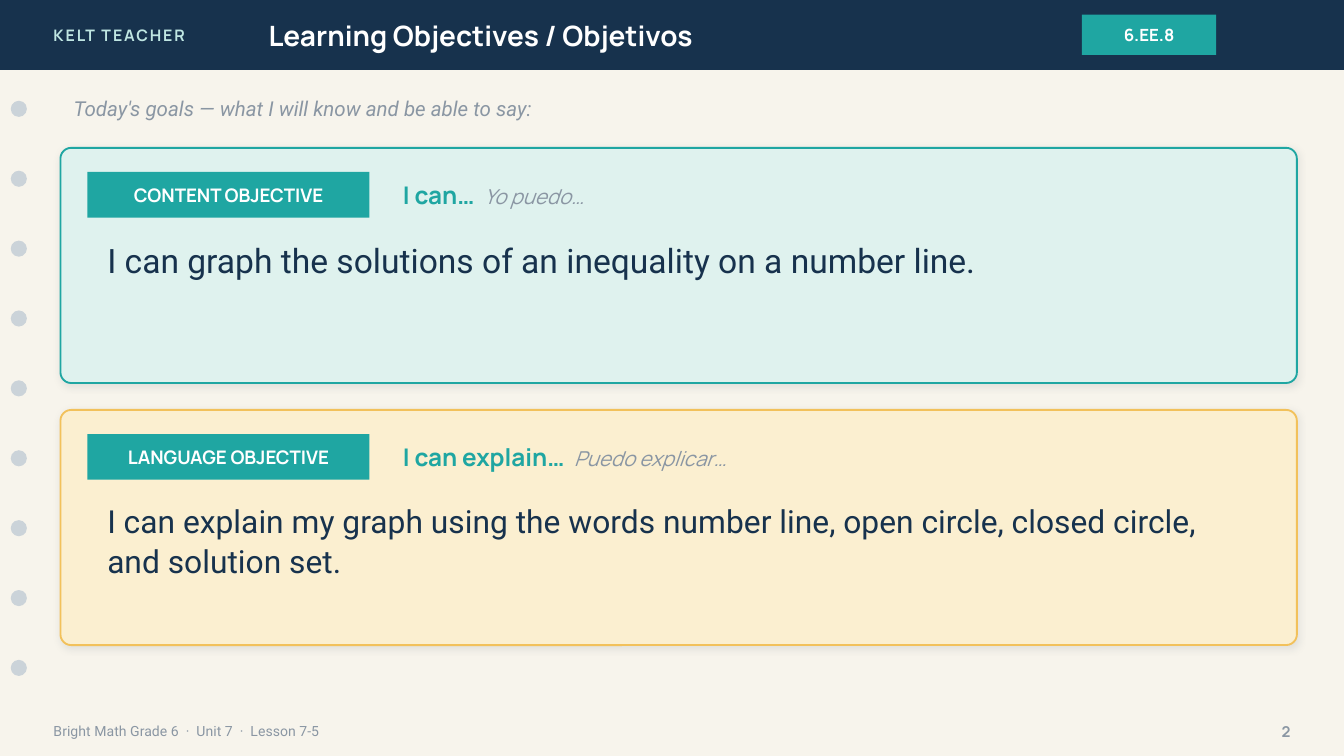
from dataclasses import dataclass

import pptx
import pptx.dml.color
import pptx.enum.shapes
import pptx.enum.text
import pptx.oxml
import pptx.oxml.ns
import pptx.util
from pptx.dml.color import RGBColor
from pptx.util import Inches

NAVY = RGBColor(0x17, 0x32, 0x4D)
TEAL = RGBColor(0x1F, 0xA6, 0xA2)
MINT = RGBColor(0xDF, 0xF2, 0xEE)
PALE_TEAL = RGBColor(0xBF, 0xE6, 0xE2)
GOLD = RGBColor(0xF2, 0xC1, 0x5B)
CREAM = RGBColor(0xFB, 0xEF, 0xD0)
PAPER = RGBColor(0xF7, 0xF4, 0xEC)
GREY = RGBColor(0x8A, 0x96, 0xA3)
DOT_GREY = RGBColor(0xCB, 0xD3, 0xD9)
WHITE = RGBColor(0xFF, 0xFF, 0xFF)

HEADING, BODY = "Manrope", "Roboto"
SHAPE = pptx.enum.shapes.MSO_SHAPE
ALIGN = pptx.enum.text.PP_ALIGN
ANCHOR = pptx.enum.text.MSO_ANCHOR

SLIDE_W = 10
SLIDE_H = SLIDE_W * 9 / 16
HEADER_H = 0.52
DOT_COUNT, DOT_TOP, DOT_STEP = 9, 0.75, 0.52
CARD_TOP, CARD_STEP = 1.1, 1.95

SHADOW_XML = (
    f'<a:effectLst {pptx.oxml.ns.nsdecls("a")}>'
    '<a:outerShdw blurRad="50800" dist="12700" dir="5400000" algn="bl" rotWithShape="0">'
    '<a:srgbClr val="1C2E42"><a:alpha val="10000"/></a:srgbClr>'
    '</a:outerShdw></a:effectLst>'
)


@dataclass
class Box:
    left: float
    top: float
    width: float
    height: float

    def lengths(self) -> list:
        return [Inches(v) for v in (self.left, self.top, self.width, self.height)]


@dataclass
class Objective:
    label: str
    starter: str
    translation: str
    statement: str
    size: float
    fill: RGBColor
    border: RGBColor


OBJECTIVES = [
    Objective("CONTENT OBJECTIVE", "I can…", "Yo puedo…",
              "I can graph the solutions of an inequality on a number line.",
              18, MINT, TEAL),
    Objective("LANGUAGE OBJECTIVE", "I can explain…", "Puedo explicar…",
              "I can explain my graph using the words number line, open circle, "
              "closed circle, and solution set.",
              17, CREAM, GOLD),
]


def add_run(p, text: str, *, size: float, color: RGBColor, font: str = HEADING,
            bold: bool = False, italic: bool = False, spacing: float = 0) -> None:
    r = p.add_run()
    r.text = text
    r.font.name = font
    r.font.size = pptx.util.Pt(size)
    r.font.color.rgb = color
    r.font.bold = bold
    r.font.italic = italic
    if spacing:
        r.font._element.set("spc", str(round(spacing * 100)))


def add_text(s, box: Box, text: str, *, align=ALIGN.LEFT, anchor=ANCHOR.MIDDLE,
             line_spacing: float | None = None, **run_format):
    """Add a wrapping text box and return its paragraph, for further runs."""
    tf = s.shapes.add_textbox(*box.lengths()).text_frame
    tf.word_wrap = True
    tf.vertical_anchor = anchor
    p = tf.paragraphs[0]
    p.alignment = align
    if line_spacing:
        p.line_spacing = line_spacing
    add_run(p, text, **run_format)
    return p


def add_shape(s, kind, box: Box, fill: RGBColor, border: RGBColor | None = None):
    sp = s.shapes.add_shape(kind, *box.lengths())
    sp.shadow.inherit = False
    sp.fill.solid()
    sp.fill.fore_color.rgb = fill
    if border is None:
        sp.line.fill.background()
    else:
        sp.line.color.rgb = border
        sp.line.width = pptx.util.Pt(1)
    return sp


def add_tag(s, box: Box, text: str, size: float) -> None:
    sp = add_shape(s, SHAPE.RECTANGLE, box, TEAL)
    tf = sp.text_frame
    tf.vertical_anchor = ANCHOR.MIDDLE
    p = tf.paragraphs[0]
    p.alignment = ALIGN.CENTER
    add_run(p, text, size=size, color=WHITE, bold=True)


def add_card(s, objective: Objective, top: float) -> None:
    card = add_shape(s, SHAPE.ROUNDED_RECTANGLE, Box(0.45, top, 9.2, 1.75),
                     objective.fill, objective.border)
    card.adjustments[0] = 0.08 / 1.75
    sp_pr = card._element.spPr
    sp_pr.replace(sp_pr.find(pptx.oxml.ns.qn("a:effectLst")),
                  pptx.oxml.parse_xml(SHADOW_XML))

    add_tag(s, Box(0.65, top + 0.18, 2.1, 0.34), objective.label, 10)
    p = add_text(s, Box(2.9, top + 0.18, 6.6, 0.34), objective.starter + "  ",
                 size=13, color=TEAL, bold=True)
    add_run(p, objective.translation, size=11, color=GREY, italic=True)
    add_text(s, Box(0.7, top + 0.62, 8.7, 1), objective.statement, anchor=ANCHOR.TOP,
             line_spacing=1.05, size=objective.size, color=NAVY, font=BODY)


def add_header(s) -> None:
    add_shape(s, SHAPE.RECTANGLE, Box(0, 0, SLIDE_W, HEADER_H), NAVY)
    add_text(s, Box(0.3, 0, 2.4, HEADER_H), "KELT TEACHER",
             size=8.5, color=PALE_TEAL, bold=True, spacing=1)
    add_text(s, Box(1.9, 0, 5.6, HEADER_H), "Learning Objectives / Objetivos",
             size=15, color=WHITE, bold=True)
    add_tag(s, Box(8.05, 0.11, 1, 0.3), "6.EE.8", 9)


def add_footer(s) -> None:
    add_text(s, Box(0.3, 5.3, 7, 0.28), "Bright Math Grade 6  ·  Unit 7  ·  Lesson 7-5",
             size=7.5, color=GREY, font=BODY)
    add_text(s, Box(9.2, 5.3, 0.5, 0.28), "2", align=ALIGN.RIGHT,
             size=8, color=GREY, bold=True)


def main() -> None:
    prs = pptx.Presentation()
    prs.slide_width, prs.slide_height = Inches(SLIDE_W), Inches(SLIDE_H)
    s = prs.slides.add_slide(prs.slide_layouts[6])
    s.background.fill.solid()
    s.background.fill.fore_color.rgb = PAPER

    add_header(s)
    for i in range(DOT_COUNT):
        add_shape(s, SHAPE.OVAL, Box(0.08, DOT_TOP + i * DOT_STEP, 0.12, 0.12), DOT_GREY)
    add_footer(s)
    add_text(s, Box(0.45, 0.66, 9.2, 0.3),
             "Today's goals — what I will know and be able to say:",
             size=11, color=GREY, font=BODY, italic=True)
    for i, objective in enumerate(OBJECTIVES):
        add_card(s, objective, CARD_TOP + i * CARD_STEP)

    prs.save("out.pptx")


if __name__ == "__main__":
    main()
